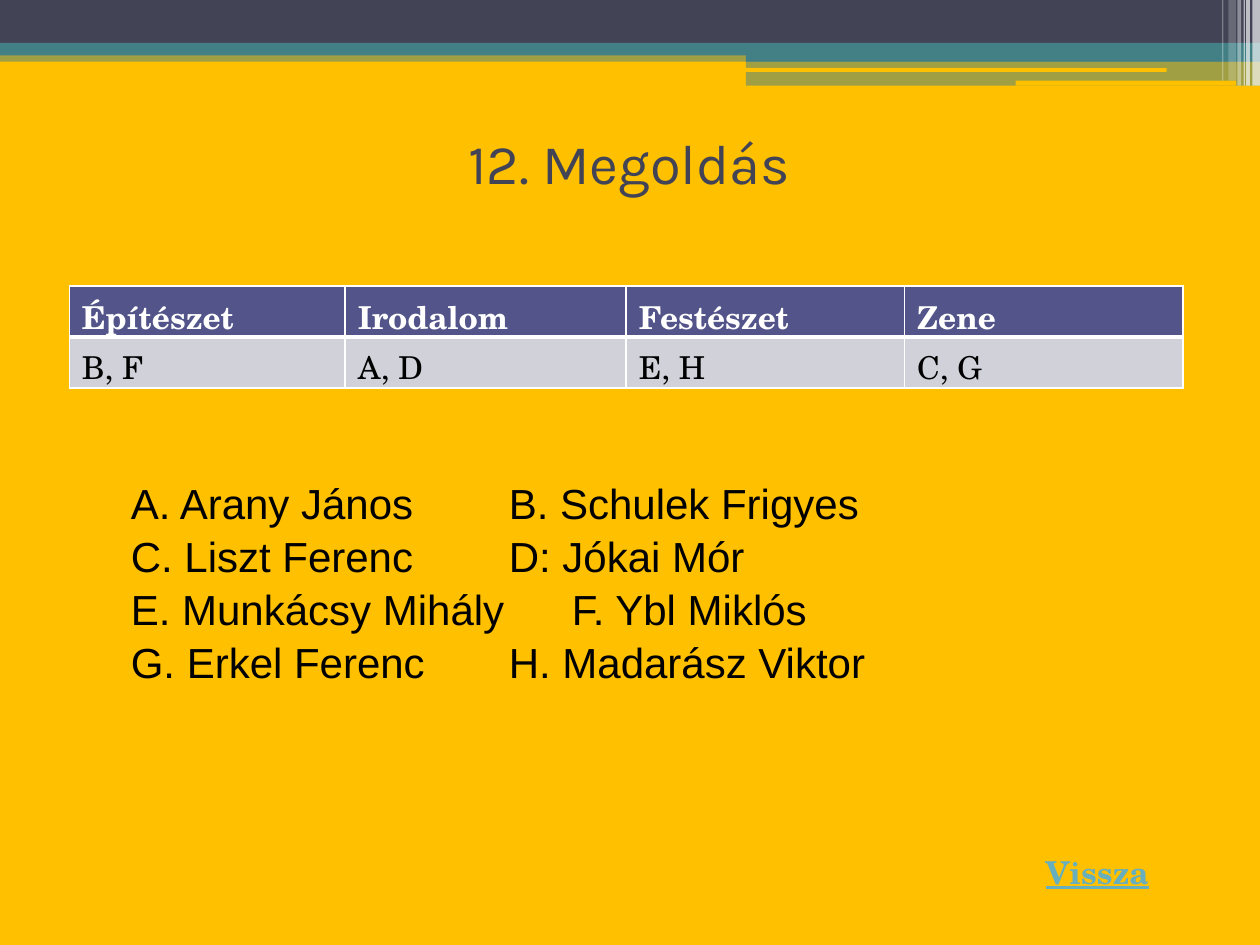
from dataclasses import dataclass

from lxml.etree import SubElement
from pptx import Presentation
from pptx.dml.color import RGBColor
from pptx.enum.shapes import MSO_SHAPE
from pptx.enum.text import MSO_ANCHOR, MSO_AUTO_SIZE, PP_ALIGN
from pptx.oxml import parse_xml
from pptx.oxml.ns import nsdecls, qn
from pptx.util import Inches, Pt


@dataclass(frozen=True)
class Theme:
    background: str = "FFC000"
    dark: str = "424456"
    teal: str = "438086"
    white: str = "FFFFFF"
    black: str = "000000"
    header: str = "53548A"
    row: str = "D1D1DA"
    link: str = "67AFBD"
    serif: str = "TeX Gyre Schola"
    sans: str = "Arial"
    display: str = "Karla"
    title_size: int = 32
    list_size: int = 24
    small_size: int = 18


THEME = Theme()


def inches(box):
    return [Inches(value) for value in box]


def set_all(target, values):
    for name, value in values.items():
        setattr(target, name, value)


def style_font(font, name, size, color, **extra):
    set_all(font, {"name": name, "size": Pt(size), **extra})
    font.color.rgb = RGBColor.from_string(color)


def line_xml(tag, color, width):
    return parse_xml(
        f'<a:{tag} {nsdecls("a")} w="{Pt(width)}"><a:solidFill>'
        f'<a:srgbClr val="{color}"/></a:solidFill></a:{tag}>'
    )


def add_block(slide, box, color, opacity=100, kind=MSO_SHAPE.RECTANGLE):
    shape = slide.shapes.add_shape(kind, *inches(box))
    shape.shadow.inherit = False
    shape.fill.solid()
    shape.fill.fore_color.rgb = RGBColor.from_string(color)
    shape.line.fill.background()
    if opacity < 100:
        color_element = shape.fill._xPr.find(".//" + qn("a:srgbClr"))
        SubElement(color_element, qn("a:alpha"), val=str(opacity * 1000))
    return shape


def add_banner(slide, box):
    left, top, width, height = box
    right = left + width
    step = left + 5.92
    bands = [
        (left, 0.4, 0.09, THEME.teal, 50),
        (left, 0, 0.34, THEME.dark, 100),
        (left, 0.34, 0.1, THEME.teal, 100),
        (step, 0.39, 0.1, THEME.teal, 100),
        (step, 0.48, 0.2, THEME.teal, 50),
    ]
    for start, offset, depth, color, opacity in bands:
        add_block(slide, (start, top + offset, right - start, depth), color, opacity)

    for start, offset, length, depth in [(5.91, 0.54, 3.35, 0.03), (8.06, 0.64, 1.75, 0.04)]:
        add_block(slide, (left + start, top + offset, length, depth),
                  THEME.background, kind=MSO_SHAPE.ROUNDED_RECTANGLE)

    stripes = [
        (0.06, 0.06, height, 65),
        (0.11, 0.03, height, 65),
        (0.13, 0.01, height, 60),
        (0.18, 0.03, height, 40),
        (0.25, 0.06, height - 0.04, 20),
        (0.3, 0.01, height - 0.04, 30),
    ]
    for inset, thickness, depth, opacity in stripes:
        add_block(slide, (right - inset, top, thickness, depth), THEME.white, opacity)


def add_title(slide, box, text):
    title = slide.shapes.title
    set_all(title, dict(zip(("left", "top", "width", "height"), inches(box))))
    title.text_frame.text = text
    title.text_frame.vertical_anchor = MSO_ANCHOR.MIDDLE
    paragraph = title.text_frame.paragraphs[0]
    paragraph.alignment = PP_ALIGN.CENTER
    style_font(paragraph.runs[0].font, THEME.display, THEME.title_size, THEME.dark)


def add_back_button(slide, box, text):
    button = add_block(slide, box, THEME.background)
    frame = button.text_frame
    set_all(frame, {"text": text, "word_wrap": False,
                    "vertical_anchor": MSO_ANCHOR.TOP,
                    "auto_size": MSO_AUTO_SIZE.SHAPE_TO_FIT_TEXT})
    paragraph = frame.paragraphs[0]
    paragraph.alignment = PP_ALIGN.LEFT
    font = paragraph.runs[0].font
    style_font(font, THEME.serif, THEME.small_size, THEME.link, bold=True, underline=True)
    font._rPr.insert(0, line_xml("ln", THEME.white, 1.4))


def style_cell(cell, text, fill, color, bold, top, bottom):
    cell.text = text
    cell.fill.solid()
    cell.fill.fore_color.rgb = RGBColor.from_string(fill)
    style_font(cell.text_frame.paragraphs[0].runs[0].font,
               THEME.serif, THEME.small_size, color, bold=bold)
    borders = {"lnL": 1, "lnR": 1, "lnT": top, "lnB": bottom}
    for index, (tag, width) in enumerate(borders.items()):
        cell._tc.get_or_add_tcPr().insert(index, line_xml(tag, THEME.white, width))


def add_answer_table(slide, box, answers, widths):
    frame = slide.shapes.add_table(2, len(answers), *inches(box))
    table = frame.table
    for row in table.rows:
        row.height = Inches(box[3] / 2)
    for index, (subject, letters) in enumerate(answers.items()):
        table.columns[index].width = Inches(widths[index])
        style_cell(table.cell(0, index), subject, THEME.header, THEME.white, True, 1, 3)
        style_cell(table.cell(1, index), letters, THEME.row, THEME.black, False, 3, 1)


def add_name_list(slide, box, pairs):
    frame = slide.shapes.add_textbox(*inches(box)).text_frame
    set_all(frame, {"word_wrap": True, "vertical_anchor": MSO_ANCHOR.MIDDLE,
                    "auto_size": MSO_AUTO_SIZE.SHAPE_TO_FIT_TEXT,
                    "text": "\n".join("\t\t".join(pair) for pair in pairs)})
    for paragraph in frame.paragraphs:
        paragraph.line_spacing = 1.05
        for run in paragraph.runs:
            style_font(run.font, THEME.sans, THEME.list_size, THEME.black)


def main():
    presentation = Presentation()
    set_all(presentation, {"slide_width": Inches(10), "slide_height": Inches(7.5)})
    slide = presentation.slides.add_slide(presentation.slide_layouts[5])
    slide.background.fill.solid()
    slide.background.fill.fore_color.rgb = RGBColor.from_string(THEME.background)

    add_banner(slide, (0, 0, 10, 0.68))
    add_title(slide, (0.23, 0.7, 9.53, 1.17), "12. Megoldás")
    add_back_button(slide, (8.2, 6.72, 1.03, 0.4), "Vissza")
    answers = {"Építészet": "B, F", "Irodalom": "A, D", "Festészet": "E, H", "Zene": "C, G"}
    add_answer_table(slide, (0.55, 2.27, 8.83, 0.81), answers, (2.19, 2.23, 2.21, 2.21))
    add_name_list(slide, (0.94, 3.75, 7.27, 1.72), [
        ("A. Arany János", "B. Schulek Frigyes"),
        ("C. Liszt Ferenc", "D: Jókai Mór"),
        ("E. Munkácsy Mihály", "F. Ybl Miklós"),
        ("G. Erkel Ferenc", "H. Madarász Viktor"),
    ])
    presentation.save("out.pptx")


if __name__ == "__main__":
    main()
